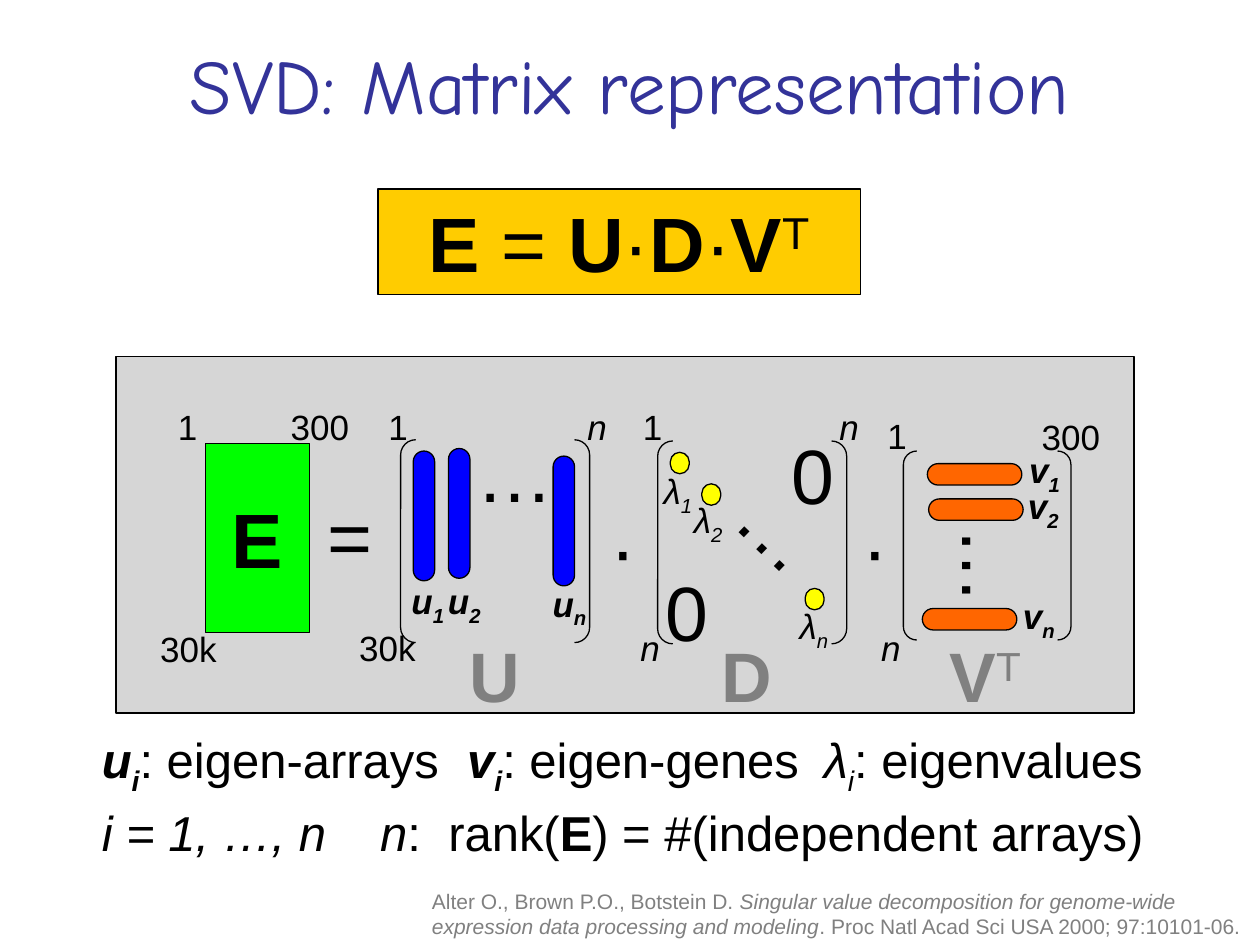
from lxml.etree import SubElement as Sub
from pptx import Presentation
from pptx.dml.color import RGBColor
from pptx.enum.shapes import MSO_SHAPE as Kind
from pptx.enum.text import MSO_ANCHOR as Anchor, PP_ALIGN as Align
from pptx.oxml.ns import qn
from pptx.util import Emu, Pt

PX = 9144
hue = RGBColor.from_string
INK, GREY = "000000", "808080"


def write(shape, lines, size, color=INK, font="Arial", align=Align.CENTER,
          anchor=Anchor.TOP, wrap=False):
    frame = shape.text_frame
    frame.word_wrap = wrap
    frame.vertical_anchor = anchor
    for k, line in enumerate(lines):
        para = frame.add_paragraph() if k else frame.paragraphs[0]
        para.alignment = align
        for text, style, base in line:
            run = para.add_run()
            run.text = text
            run.font.name = font
            run.font.size = Pt(size)
            run.font.bold = "b" in style
            run.font.italic = "i" in style
            run.font.color.rgb = hue(color)
            if base:
                run.font._element.set("baseline", str(base * 1000))
    return frame


def draw(kind, box, fill=None, adj=None):
    shape = slide.shapes.add_shape(kind, *[Emu(n * PX) for n in box])
    shape.shadow.inherit = False
    if fill:
        shape.fill.solid()
        shape.fill.fore_color.rgb = hue(fill)
    else:
        shape.fill.background()
    shape.line.color.rgb = hue(INK)
    shape.line.width = Pt(0.75)
    if adj:
        shape.adjustments[0] = adj
    return shape


deck = Presentation()
deck.slide_width, deck.slide_height = Emu(1000 * PX), Emu(750 * PX)
slide = deck.slides.add_slide(deck.slide_layouts[6])

title = slide.shapes.add_textbox(0, 0, Emu(1000 * PX), Emu(133 * PX))
write(title, [[("SVD: Matrix representation", "", 0)]], 44, "333399",
      "Comic Neue", anchor=Anchor.MIDDLE, wrap=True)

rule = draw(Kind.RECTANGLE, (300, 150, 383, 84), "FFCC00")
write(rule, [[("E", "b", 0), (" = ", "", 0), ("U", "b", 0), ("·", "", 0),
              ("D", "b", 0), ("·", "", 0), ("V", "b", 0), ("T", "", 30)]],
      44, wrap=True)

panel = draw(Kind.RECTANGLE, (92, 283, 808, 283), GREY)
tint = panel._element.spPr.find(qn("a:solidFill"))[0]
Sub(tint, qn("a:alpha")).set("val", "32000")

data = draw(Kind.RECTANGLE, (163, 352, 83, 150), "00FF00")
write(data, [[("E", "b", 0)]], 44, anchor=Anchor.MIDDLE)

for box in [(318, 349, 150, 161), (522, 350, 150, 161), (717, 358, 133, 150)]:
    draw(Kind.DOUBLE_BRACKET, box, adj=0.08)

bars = [
    ("0000FF", 17, 103, [(328, 358), (356, 356), (439, 362)]),
    ("FFFF00", 15, 17, [(532, 359), (557, 384), (639, 467)]),
    ("FF6600", 75, 17, [(736, 368), (737, 396), (732, 483)]),
]
for fill, wide, high, spots in bars:
    for x, y in spots:
        draw(Kind.ROUNDED_RECTANGLE, (x, y, wide, high), fill, 0.5)

labels = [
    (214, 317, 80, "300", ""), (131, 317, 36, "1", ""),
    (112, 493, 75, "30k", ""), (810, 325, 80, "300", ""),
    (298, 317, 36, "1", ""), (270, 492, 75, "30k", ""),
    (456, 317, 36, "n", "i"), (500, 317, 36, "1", ""),
    (656, 317, 36, "n", "i"), (498, 492, 36, "n", "i"),
    (694, 324, 36, "1", ""), (689, 492, 36, "n", "i"),
    (316, 455, 47, "u1", "bi"), (345, 455, 47, "u2", "bi"),
    (425, 457, 54, "un", "bi"), (516, 368, 44, "λ1", "i"),
    (540, 391, 44, "λ2", "i"), (624, 475, 44, "λn", "i"),
    (806, 351, 46, "v1", "bi"), (805, 380, 46, "v2", "bi"),
    (801, 467, 47, "vn", "bi"),
]
for x, y, wide, text, style in labels:
    box = slide.shapes.add_textbox(*[Emu(n * PX) for n in (x, y, wide, 43)])
    runs = [(text, style, 0)]
    if text[0] in "uvλ":
        runs = [(text[0], style, 0), (text[1], style, -25)]
    write(box, [runs], 20)

signs = [
    (250, 383, 56, "=", 0), (475, 392, 37, "·", 0), (675, 392, 37, "·", 0),
    (368, 333, 81, "…", 0), (579, 379, 81, "…", 43.8), (748, 408, 81, "…", 90),
    (518, 443, 54, "0", 0), (618, 334, 54, "0", 0),
]
for x, y, wide, text, turn in signs:
    box = slide.shapes.add_textbox(*[Emu(n * PX) for n in (x, y, wide, 83)])
    box.rotation = turn
    write(box, [[(text, "", 0)]], 44)

names = [(363, 60, [("U", "b", 0)]), (563, 60, [("D", "b", 0)]),
         (742, 80, [("V", "b", 0), ("T", "", 30)])]
for x, wide, runs in names:
    box = slide.shapes.add_textbox(*[Emu(n * PX) for n in (x, 497, wide, 77)])
    write(box, [runs], 40, GREY)

legend = slide.shapes.add_textbox(*[Emu(n * PX) for n in (71, 569, 863, 113)])
frame = write(legend, [
    [("u", "bi", 0), ("i", "bi", -25), (": eigen-arrays\t", "", 0),
     ("v", "bi", 0), ("i", "bi", -25), (": eigen-genes\t", "", 0),
     ("λ", "i", 0), ("i", "i", -25), (": eigenvalues", "", 0)],
    [("i = 1, …, n\tn", "i", 0), (":\trank(", "", 0), ("E", "b", 0),
     (") = #(independent arrays)", "", 0)],
], 28, align=Align.LEFT, wrap=True)
for para, stops in zip(frame.paragraphs, [(290, 573), (221, 275)]):
    para.line_spacing = 1.1
    tabs = Sub(para._p.get_or_add_pPr(), qn("a:tabLst"))
    for stop in stops:
        tab = Sub(tabs, qn("a:tab"))
        tab.set("pos", str(stop * PX))
        tab.set("algn", "l")

cite = slide.shapes.add_textbox(*[Emu(n * PX) for n in (333, 700, 667, 50)])
write(cite, [
    [("Alter O., Brown P.O., Botstein D. ", "", 0),
     ("Singular value decomposition for genome-wide", "i", 0)],
    [("expression data processing and modeling", "i", 0),
     (". Proc Natl Acad Sci USA 2000; 97:10101-06.", "", 0)],
], 12, GREY, align=Align.LEFT, anchor=Anchor.MIDDLE)

deck.save("out.pptx")
